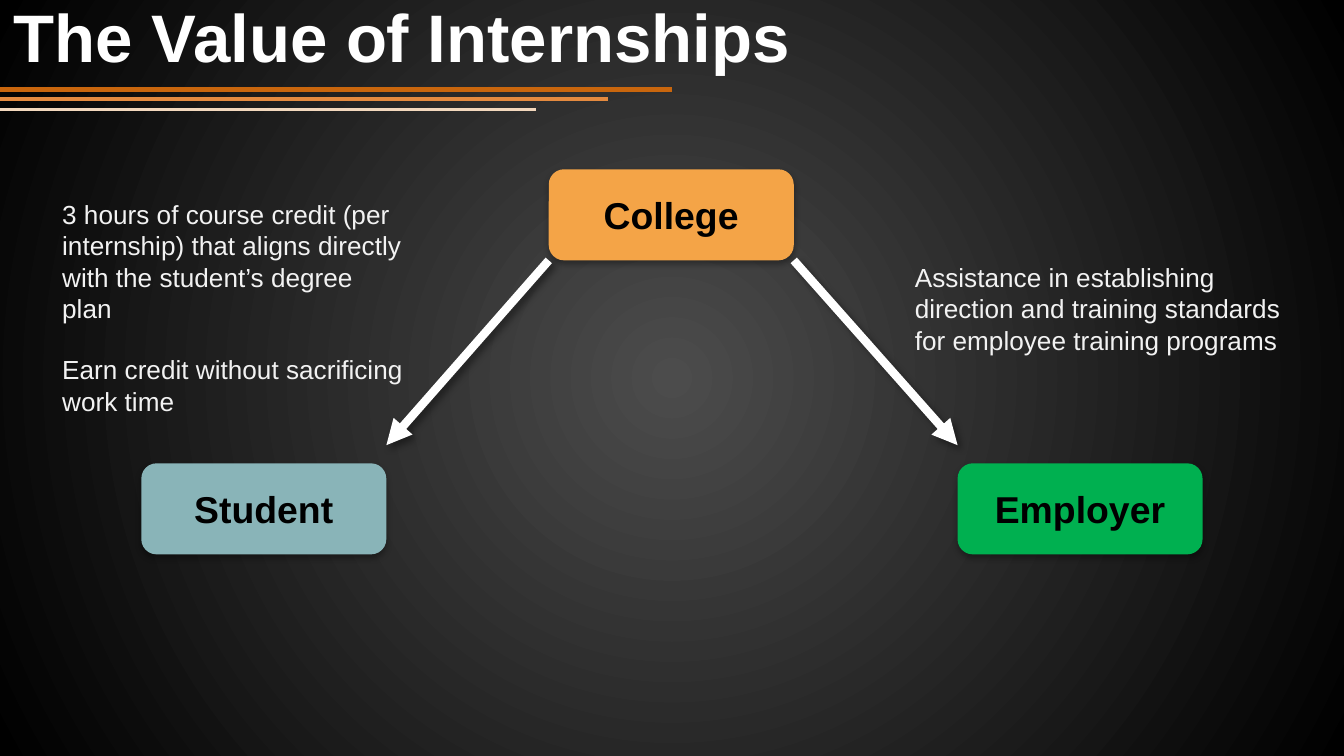
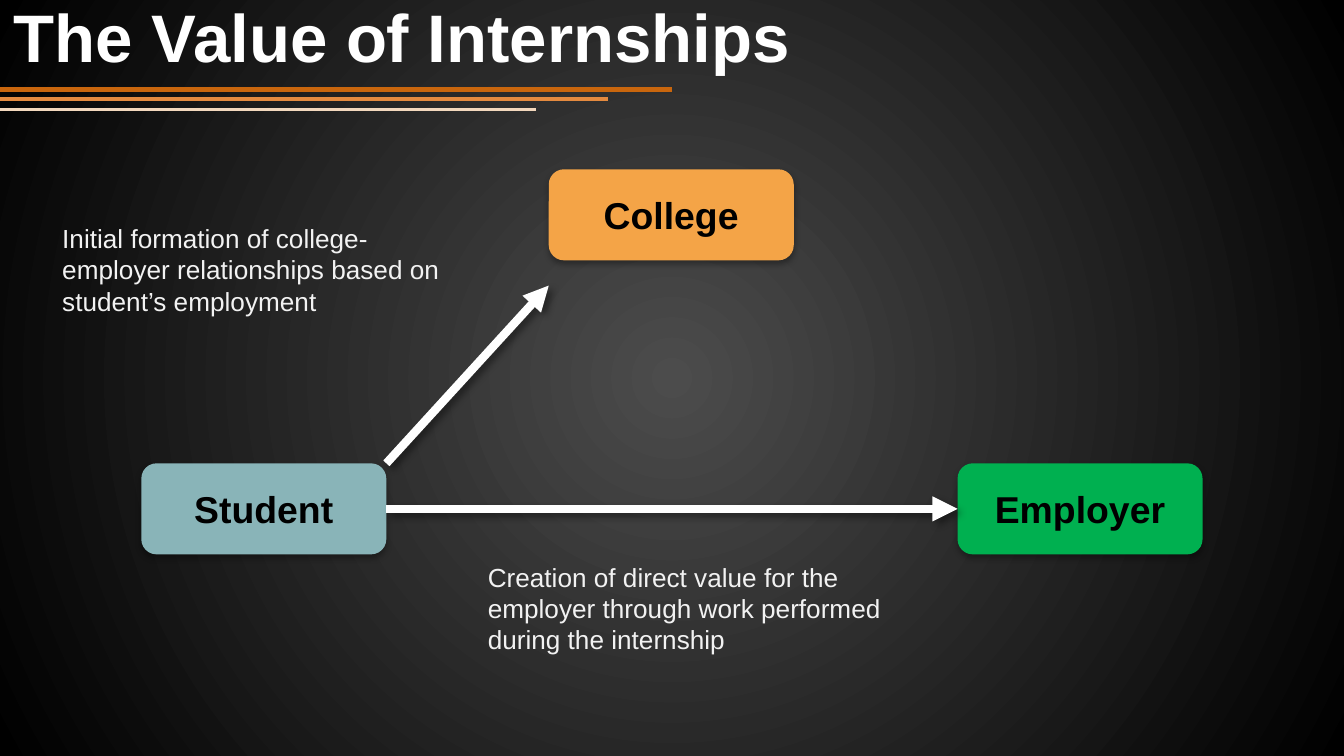
from dataclasses import dataclass

from lxml.etree import SubElement
from pptx import Presentation
from pptx.dml.color import RGBColor
from pptx.enum.shapes import MSO_CONNECTOR as Line, MSO_SHAPE as Preset
from pptx.enum.text import MSO_ANCHOR as Anchor, MSO_AUTO_SIZE as AutoSize, PP_ALIGN as Align
from pptx.oxml.ns import qn
from pptx.util import Pt

PX = 9525  # EMU in one px, 96 px to the inch
FONT = "Arial"
WHITE, BLACK, PALE = "FFFFFF", "000000", "F2F2F2"
TITLE = "The Value of Internships"
NODE_WIDTH, NODE_HEIGHT = 175, 65
NOTE_SIZE = 14


@dataclass(frozen=True)
class Node:
    label: str
    left: int
    top: int
    color: str

    @property
    def right(self) -> int:
        return self.left + NODE_WIDTH

    @property
    def bottom(self) -> int:
        return self.top + NODE_HEIGHT


@dataclass(frozen=True)
class Stripe:
    left: int
    right: int
    top: int
    color: str
    weight: float


@dataclass(frozen=True)
class Shadow:
    opacity: int
    blur: float
    distance: float
    angle: int


@dataclass(frozen=True)
class Arrow:
    start: tuple[int, int]
    end: tuple[int, int]


@dataclass(frozen=True)
class Note:
    left: int
    top: int
    width: int
    height: int
    paragraphs: tuple[str, ...]


STRIPES = (
    Stripe(0, 480, 64, "C9660D", 3),
    Stripe(0, 434, 71, "E48A3F", 2.25),
    Stripe(-1, 383, 78, "F3D8BD", 1.5),
)
COLLEGE = Node("College", 392, 121, "F4A447")
STUDENT = Node("Student", 101, 331, "89B4B8")
EMPLOYER = Node("Employer", 684, 331, "00B050")
NODE_SHADOW = Shadow(32, 3.5, 2.2, 90)
ARROW_SHADOW = Shadow(40, 4, 3, 45)


def rgb(color: str) -> RGBColor:
    return RGBColor.from_string(color)


def set_effects(element, shadow: Shadow | None = None) -> None:
    """Give a finished shape or connector its own shadow, or none."""
    effects = SubElement(element.spPr, qn("a:effectLst"))
    if shadow:
        outer = SubElement(
            effects, qn("a:outerShdw"), blurRad=str(Pt(shadow.blur)),
            dist=str(Pt(shadow.distance)), dir=str(shadow.angle * 60000),
            algn="ctr", rotWithShape="0")
        tint = SubElement(outer, qn("a:srgbClr"), val=BLACK)
        SubElement(tint, qn("a:alpha"), val=str(shadow.opacity * 1000))


def format_text(frame, size: int, color: str, bold: bool = False) -> None:
    for para in frame.paragraphs:
        for span in para.runs:
            font = span.font
            font.name, font.size, font.bold = FONT, Pt(size), bold
            font.color.rgb = rgb(color)


def draw_line(page, start: tuple[int, int], end: tuple[int, int],
              color: str, weight: float):
    line = page.shapes.add_connector(
        Line.STRAIGHT, *(value * PX for value in (*start, *end)))
    line.line.color.rgb = rgb(color)
    line.line.width = Pt(weight)
    return line


def draw_arrow(page, arrow: Arrow | None = None, joined=None) -> None:
    start, end = (arrow.start, arrow.end) if arrow else ((0, 0), (0, 0))
    line = draw_line(page, start, end, WHITE, 4.5)
    if joined:
        line.begin_connect(joined[0], 3)
        line.end_connect(joined[1], 1)
    SubElement(line.element.spPr.find(qn("a:ln")), qn("a:tailEnd"), type="triangle")
    set_effects(line.element, ARROW_SHADOW)


def add_box(page, left: int, top: int, width: int, height: int):
    return page.shapes.add_textbox(left * PX, top * PX, width * PX, height * PX)


def draw_node(page, node: Node):
    shape = page.shapes.add_shape(
        Preset.ROUNDED_RECTANGLE, node.left * PX, node.top * PX,
        NODE_WIDTH * PX, NODE_HEIGHT * PX)
    shape.fill.solid()
    shape.fill.fore_color.rgb = rgb(node.color)
    shape.line.fill.background()
    set_effects(shape.element, NODE_SHADOW)
    frame = shape.text_frame
    frame.text = node.label
    frame.vertical_anchor = Anchor.MIDDLE
    frame.paragraphs[0].alignment = Align.CENTER
    format_text(frame, 20, BLACK, bold=True)
    return shape


def draw_note(page, note: Note) -> None:
    box = add_box(page, note.left, note.top, note.width, note.height)
    frame = box.text_frame
    frame.word_wrap = False
    frame.auto_size = AutoSize.SHAPE_TO_FIT_TEXT
    for index, text in enumerate(note.paragraphs):
        para = frame.add_paragraph() if index else frame.paragraphs[0]
        para.text = text
        if index:
            para.space_before = Pt(16)
    format_text(frame, NOTE_SIZE, PALE)
    for line_break in box.element.iter(qn("a:br")):
        SubElement(line_break, qn("a:rPr"), sz=str(NOTE_SIZE * 100))


def draw_title(page) -> None:
    frame = add_box(page, 0, 0, 864, 64).text_frame
    frame.text = TITLE
    frame.word_wrap = True
    frame.auto_size = AutoSize.NONE
    frame.vertical_anchor = Anchor.BOTTOM
    frame.margin_left = frame.margin_right = 10 * PX
    frame.margin_top = frame.margin_bottom = 10 * PX
    format_text(frame, 36, WHITE, bold=True)


def set_background(master) -> None:
    """Radial gradient, light in the centre, for every slide."""
    fill = master.background.fill
    fill.gradient()
    for stop, color, position in zip(fill.gradient_stops, ("4C4C4C", BLACK), (0, 1)):
        stop.color.rgb = rgb(color)
        stop.position = position
    gradient = next(master.element.iter(qn("a:gradFill")))
    gradient.remove(gradient.find(qn("a:lin")))
    circle = SubElement(gradient, qn("a:path"), path="circle")
    SubElement(circle, qn("a:fillToRect"), l="50000", t="50000", r="50000", b="50000")


def add_page(deck):
    """Slide with stripes, title and the three parties."""
    page = deck.slides.add_slide(deck.slide_layouts[6])
    for stripe in STRIPES:
        line = draw_line(page, (stripe.left, stripe.top), (stripe.right, stripe.top),
                         stripe.color, stripe.weight)
        set_effects(line.element)
    draw_title(page)
    nodes = [draw_node(page, node) for node in (COLLEGE, STUDENT, EMPLOYER)]
    return page, nodes


def build_college_page(deck) -> None:
    page, _ = add_page(deck)
    draw_arrow(page, Arrow((COLLEGE.left, COLLEGE.bottom), (STUDENT.right, 318)))
    draw_arrow(page, Arrow((COLLEGE.right, COLLEGE.bottom), (EMPLOYER.left, 318)))
    draw_note(page, Note(644, 182, 281, 78, (
        "Assistance in establishing\ndirection and training standards\n"
        "for employee training programs",)))
    draw_note(page, Note(35, 137, 274, 168, (
        "3 hours of course credit (per\ninternship) that aligns directly\n"
        "with the student’s degree\nplan",
        "Earn credit without sacrificing\nwork time")))


def build_student_page(deck) -> None:
    page, (_, student, employer) = add_page(deck)
    draw_arrow(page, Arrow((STUDENT.right, STUDENT.top), (COLLEGE.left, 204)))
    draw_arrow(page, joined=(student, employer))
    draw_note(page, Note(339, 396, 301, 78, (
        "Creation of direct value for the\nemployer through work performed\n"
        "during the internship",)))
    draw_note(page, Note(35, 154, 290, 78, (
        "Initial formation of college-\nemployer relationships based on\n"
        "student’s employment",)))


def main() -> None:
    deck = Presentation()
    deck.slide_width, deck.slide_height = 960 * PX, 540 * PX
    set_background(deck.slide_master)
    build_college_page(deck)
    build_student_page(deck)
    deck.save("out.pptx")


if __name__ == "__main__":
    main()
